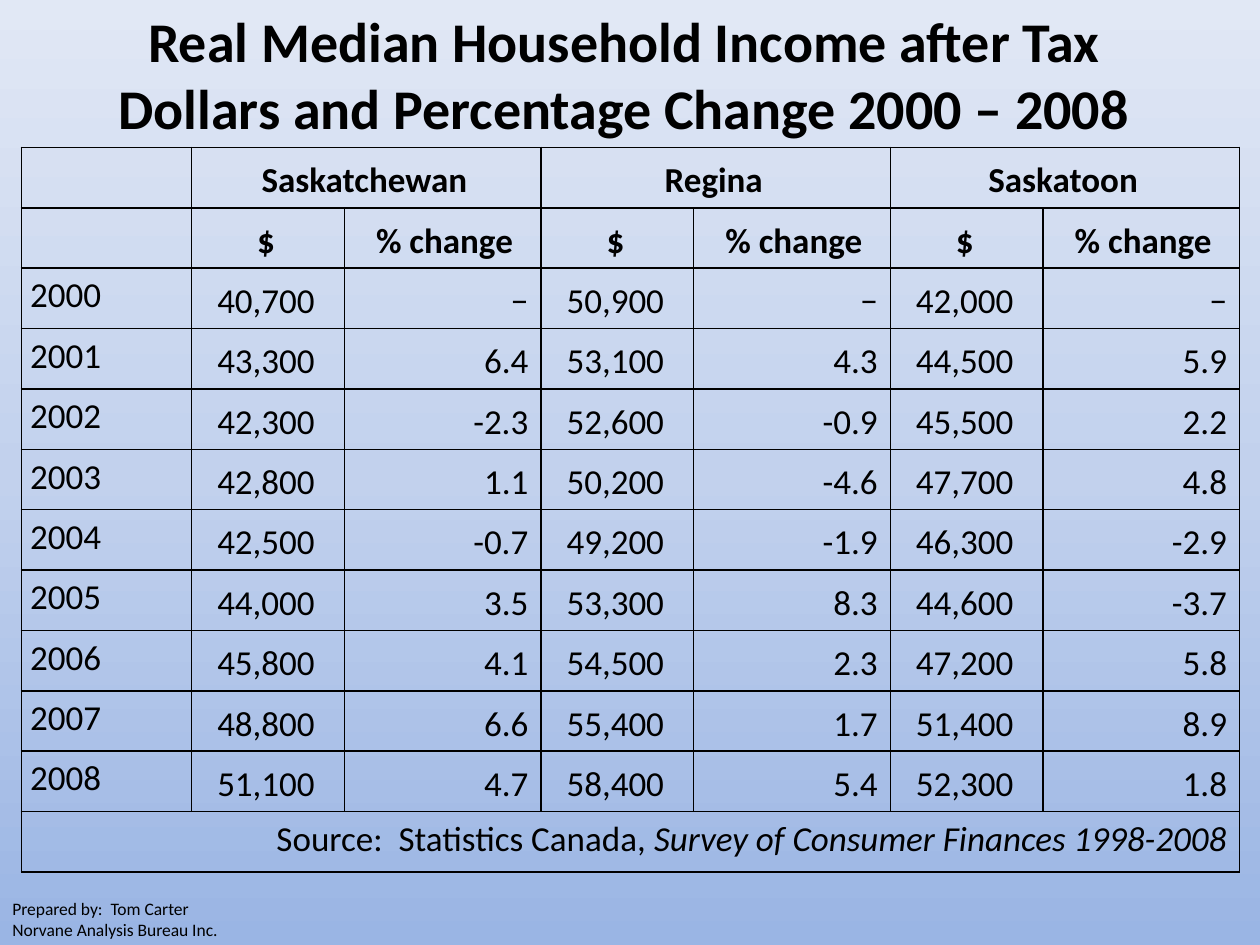
import copy
import pptx
import pptx.dml.color
import pptx.enum.text
import pptx.oxml
import pptx.oxml.ns
import pptx.util

COLORS = {"ink": "000000", "low": "9AB5E4", "middle": "C2D1ED", "high": "E1E8F5"}
FONT = "Calibri"
WIDTH, HEIGHT = pptx.util.Inches(10), pptx.util.Inches(7.5)
TITLE_BOX = (0.033, 0, 0.925, 0.197)
TABLE_BOX = (0.017, 0.156, 0.967, 0.767)
CREDIT_BOX = (0, 0.944, 0.2, 0.059)
COLUMN_SHARES = [1.35] + [1.21, 1.56] * 3
REGIONS = ["Saskatchewan", "Regina", "Saskatoon"]
INCOMES = [
    ["2000", "40,700", "−", "50,900", "−", "42,000", "−"],
    ["2001", "43,300", "6.4", "53,100", "4.3", "44,500", "5.9"],
    ["2002", "42,300", "-2.3", "52,600", "-0.9", "45,500", "2.2"],
    ["2003", "42,800", "1.1", "50,200", "-4.6", "47,700", "4.8"],
    ["2004", "42,500", "-0.7", "49,200", "-1.9", "46,300", "-2.9"],
    ["2005", "44,000", "3.5", "53,300", "8.3", "44,600", "-3.7"],
    ["2006", "45,800", "4.1", "54,500", "2.3", "47,200", "5.8"],
    ["2007", "48,800", "6.6", "55,400", "1.7", "51,400", "8.9"],
    ["2008", "51,100", "4.7", "58,400", "5.4", "52,300", "1.8"],
]
ALIGN = pptx.enum.text.PP_ALIGN
ANCHOR = pptx.enum.text.MSO_ANCHOR


def rgb(name):
    return pptx.dml.color.RGBColor.from_string(COLORS[name])


def scale(box):
    x, y, w, h = box
    return int(x * WIDTH), int(y * HEIGHT), int(w * WIDTH), int(h * HEIGHT)


def style(p, size, align=ALIGN.LEFT, bold=False):
    p.alignment = align
    p.font.name = FONT
    p.font.size = pptx.util.Pt(size)
    p.font.bold = bold
    p.font.color.rgb = rgb("ink")


def paint_background(s):
    fill = s.background.fill
    fill.gradient()
    fill.gradient_angle = 90
    first = next(s.element.iter(pptx.oxml.ns.qn("a:gs")))
    first.addnext(copy.deepcopy(first))
    for stop, name, position in zip(fill.gradient_stops, ("low", "middle", "high"), (0, 0.5, 1)):
        stop.color.rgb = rgb(name)
        stop.position = position


def add_title(s, box):
    title = s.shapes.title
    title.left, title.top, title.width, title.height = scale(box)
    tf = title.text_frame
    tf.auto_size = pptx.enum.text.MSO_AUTO_SIZE.NONE
    tf.vertical_anchor = ANCHOR.TOP
    tf.text = "Real Median Household Income after Tax\nDollars and Percentage Change 2000 – 2008"
    for p in tf.paragraphs:
        style(p, 32, ALIGN.CENTER, True)


def add_borders(cell):
    tc_pr = cell._tc.get_or_add_tcPr()
    for position, side in enumerate(("lnL", "lnR", "lnT", "lnB")):
        tc_pr.insert(position, pptx.oxml.parse_xml(
            f'<a:{side} {pptx.oxml.ns.nsdecls("a")} w="12700"><a:solidFill>'
            f'<a:srgbClr val="{COLORS["ink"]}"/></a:solidFill></a:{side}>'))


def format_cell(cell, align, anchor, bold):
    cell.fill.background()
    add_borders(cell)
    cell.margin_left, cell.margin_right = pptx.util.Inches(0.07), pptx.util.Inches(0.1)
    cell.margin_top = cell.margin_bottom = 0
    cell.vertical_anchor = anchor
    p = cell.text_frame.paragraphs[0]
    style(p, 20, align, bold)
    p.line_spacing = 1.15


def add_income_table(s, box):
    region_row = [""] + [text for region in REGIONS for text in (region, "")]
    unit_row = [""] + ["$", "% change"] * len(REGIONS)
    rows = [region_row, unit_row] + INCOMES + [[""] * len(COLUMN_SHARES)]
    x, y, w, h = scale(box)
    table = s.shapes.add_table(len(rows), len(COLUMN_SHARES), x, y, w, h).table
    table.first_row = table.horz_banding = False
    for column, share in zip(table.columns, COLUMN_SHARES):
        column.width = int(w * share / sum(COLUMN_SHARES))
    for i, row in enumerate(rows):
        table.rows[i].height = h // len(rows)
        header, source = i < 2, i == len(rows) - 1
        for j, text in enumerate(row):
            cell = table.cell(i, j)
            cell.text = text
            if source:
                align = ALIGN.RIGHT
            elif j == 0:
                align = ALIGN.LEFT
            else:
                align = ALIGN.CENTER if header or j % 2 else ALIGN.RIGHT
            anchor = ANCHOR.TOP if source or j == 0 else ANCHOR.MIDDLE
            format_cell(cell, align, anchor, header)
            if text == "% change":
                cell.margin_left = pptx.util.Inches(0.13)
    for j in range(1, len(COLUMN_SHARES), 2):
        table.cell(0, j).merge(table.cell(0, j + 1))
    last = len(rows) - 1
    table.cell(last, 0).merge(table.cell(last, len(COLUMN_SHARES) - 1))
    p = table.cell(last, 0).text_frame.paragraphs[0]
    p.add_run().text = "Source:  Statistics Canada, "
    r = p.add_run()
    r.text = "Survey of Consumer Finances 1998-2008"
    r.font.italic = True


def add_credit(s, box):
    tf = s.shapes.add_textbox(*scale(box)).text_frame
    tf.word_wrap = True
    tf.text = "Prepared by:  Tom Carter\nNorvane Analysis Bureau Inc."
    for p in tf.paragraphs:
        style(p, 10)


def main():
    prs = pptx.Presentation()
    prs.slide_width, prs.slide_height = WIDTH, HEIGHT
    s = prs.slides.add_slide(prs.slide_layouts[5])
    paint_background(s)
    add_income_table(s, TABLE_BOX)
    add_title(s, TITLE_BOX)
    add_credit(s, CREDIT_BOX)
    prs.save("out.pptx")


if __name__ == "__main__":
    main()
